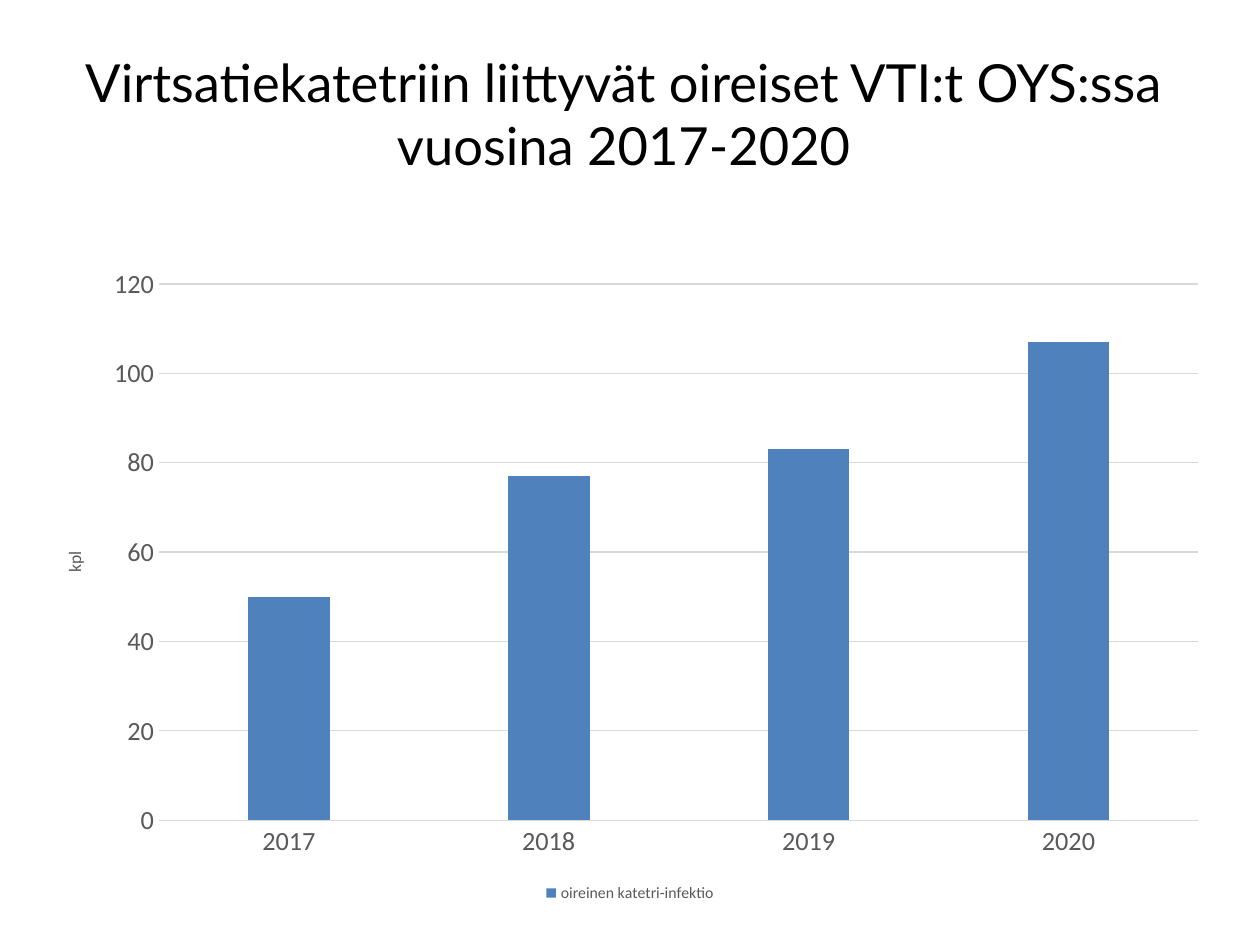
import pptx
import pptx.chart.data
import pptx.dml.color
import pptx.enum.chart
import pptx.enum.text
import pptx.util

BLACK = pptx.dml.color.RGBColor(0x00, 0x00, 0x00)
GREY = pptx.dml.color.RGBColor(0x59, 0x59, 0x59)
GRID = pptx.dml.color.RGBColor(0xD9, 0xD9, 0xD9)
BLUE = pptx.dml.color.RGBColor(0x4F, 0x81, 0xBD)
WIDTH, HEIGHT = pptx.util.Inches(10), pptx.util.Inches(7.5)


def share_box(left, top, width, height):
    """Turn shares of the slide size into a box of lengths."""
    return (int(left * WIDTH), int(top * HEIGHT),
            int(width * WIDTH), int(height * HEIGHT))


def style_font(font, size, color=GREY, name="Calibri"):
    """Set the size, colour and face of a font."""
    font.size = pptx.util.Pt(size)
    font.bold = False
    font.name = name
    font.color.rgb = color


def style_line(line):
    """Give a line the thin light grid look."""
    line.color.rgb = GRID
    line.width = pptx.util.Pt(0.75)


def place_heading(slide, box, wording):
    """Fill the title placeholder within the box."""
    heading = slide.shapes.title
    heading.left, heading.top, heading.width, heading.height = box
    frame = heading.text_frame
    frame.word_wrap = True
    frame.auto_size = pptx.enum.text.MSO_AUTO_SIZE.NONE
    frame.vertical_anchor = pptx.enum.text.MSO_ANCHOR.MIDDLE
    paragraph = frame.paragraphs[0]
    paragraph.alignment = pptx.enum.text.PP_ALIGN.CENTER
    run = paragraph.add_run()
    run.text = wording
    style_font(run.font, 30, BLACK, "Lato")


def style_axes(chart, unit):
    """Format both axes and label the value axis with its unit."""
    for axis in (chart.category_axis, chart.value_axis):
        axis.major_tick_mark = pptx.enum.chart.XL_TICK_MARK.NONE
        axis.minor_tick_mark = pptx.enum.chart.XL_TICK_MARK.NONE
        style_font(axis.tick_labels.font, 15)
    years, counts = chart.category_axis, chart.value_axis
    style_line(years.format.line)
    counts.format.line.fill.background()
    counts.minimum_scale, counts.maximum_scale = 0, 120
    counts.major_unit = 20
    counts.has_major_gridlines = True
    style_line(counts.major_gridlines.format.line)
    unit_frame = counts.axis_title.text_frame
    unit_frame._txBody.bodyPr.set("rot", "-5400000")
    unit_frame._txBody.bodyPr.set("vert", "horz")
    run = unit_frame.paragraphs[0].add_run()
    run.text = unit
    style_font(run.font, 10)


def place_infections(slide, box):
    """Draw the yearly infection counts as columns in the box."""
    infections = pptx.chart.data.CategoryChartData(number_format="General")
    infections.categories = ["2017", "2018", "2019", "2020"]
    infections.add_series("oireinen katetri-infektio", (50, 77, 83, 107))
    chart = slide.shapes.add_chart(
        pptx.enum.chart.XL_CHART_TYPE.COLUMN_CLUSTERED, *box, infections).chart
    style_font(chart.font, 10, BLACK)
    chart.has_title = False
    style_axes(chart, "kpl")
    columns = chart.plots[0]
    columns.gap_width, columns.overlap = 219, -27
    columns.vary_by_categories = False
    columns.series[0].format.fill.solid()
    columns.series[0].format.fill.fore_color.rgb = BLUE
    chart.has_legend = True
    chart.legend.position = pptx.enum.chart.XL_LEGEND_POSITION.BOTTOM
    chart.legend.include_in_layout = False
    style_font(chart.legend.font, 9)


def main():
    """Build and save the slide."""
    deck = pptx.Presentation()
    deck.slide_width, deck.slide_height = WIDTH, HEIGHT
    slide = deck.slides.add_slide(deck.slide_layouts[5])
    place_heading(
        slide, share_box(0.02, 0.03, 0.95, 0.18),
        "Virtsatiekatetriin liittyvät oireiset VTI:t OYS:ssa vuosina 2017-2020")
    place_infections(slide, share_box(0.03, 0.27, 0.94, 0.69))
    deck.save("out.pptx")


if __name__ == "__main__":
    main()
